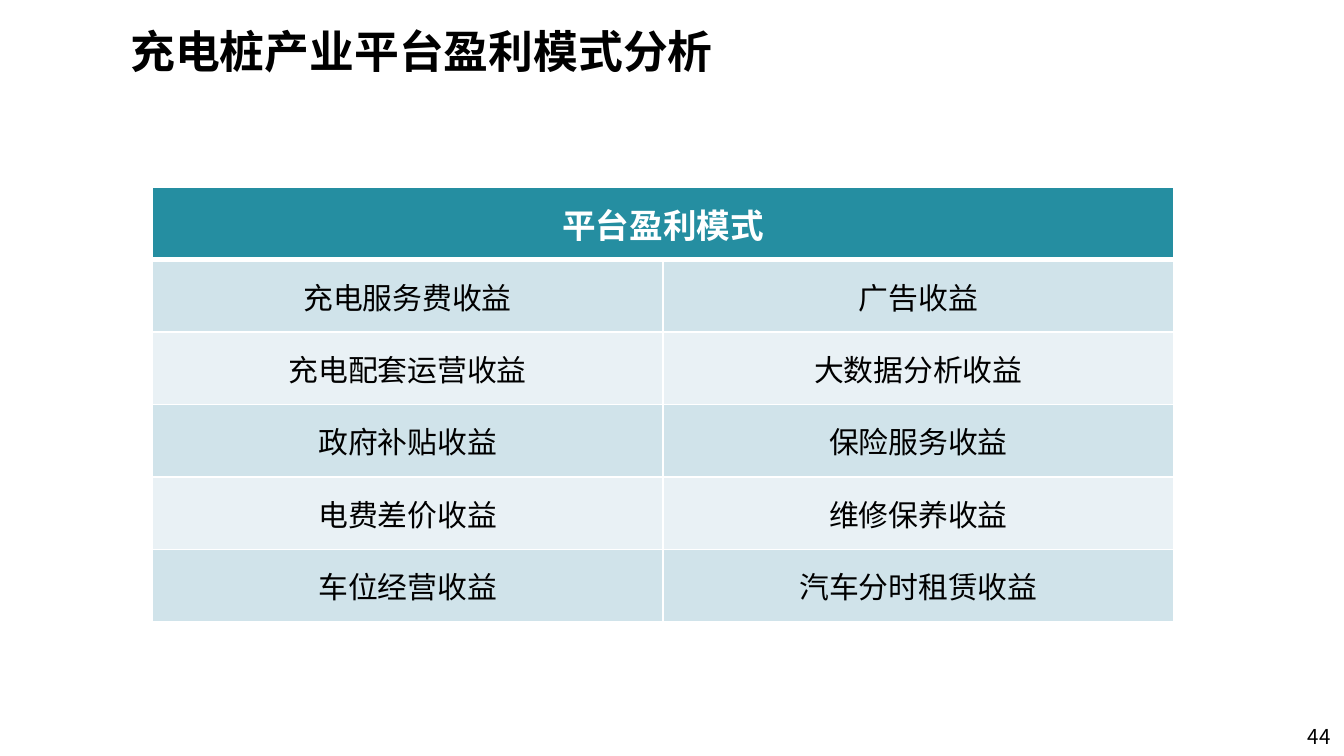
"""Build the slide on the profit model of a charging-pile platform."""
from lxml import etree
from pptx import Presentation
from pptx.dml.color import RGBColor
from pptx.enum import text
from pptx.oxml import ns
from pptx.util import Pt

FONT = "Noto Sans CJK SC"
COLORS = {
    "ink": "000000",
    "white": "FFFFFF",
    "header": "258EA1",
    "odd": "D0E3EA",
    "even": "E9F1F5",
}
HEADING = "平台盈利模式"
INCOMES = [
    ("充电服务费收益", "广告收益"),
    ("充电配套运营收益", "大数据分析收益"),
    ("政府补贴收益", "保险服务收益"),
    ("电费差价收益", "维修保养收益"),
    ("车位经营收益", "汽车分时租赁收益"),
]
COLUMN_WIDTH, ROW_HEIGHT = 273.6, 38.8


def write(frame, words, size, color, align, bold=False):
    frame.text = words
    paragraph = frame.paragraphs[0]
    paragraph.alignment = align
    font = paragraph.font
    font.size, font.bold, font.name = Pt(size), bold, FONT
    font.color.rgb = RGBColor.from_string(COLORS[color])
    properties = paragraph._p.get_or_add_pPr().get_or_add_defRPr()
    etree.SubElement(properties, ns.qn("a:ea"), typeface=FONT)
    return paragraph


def add_title(slide):
    title = slide.shapes.title
    title.left, title.top, title.width, title.height = Pt(62.6), Pt(12.2), Pt(566.6), Pt(37.4)
    frame = title.text_frame
    frame.vertical_anchor = text.MSO_ANCHOR.TOP
    frame.auto_size = text.MSO_AUTO_SIZE.NONE
    heading = write(frame, "充电桩产业平台盈利模式分析", 24, "ink", text.PP_ALIGN.LEFT, True)
    heading.line_spacing = 0.9


def add_page_number(slide):
    frame = slide.shapes.add_textbox(Pt(524.2), Pt(383.8), Pt(195.8), Pt(21.6)).text_frame
    frame.word_wrap = True
    frame.vertical_anchor = text.MSO_ANCHOR.MIDDLE
    write(frame, "44", 11, "ink", text.PP_ALIGN.RIGHT)


def set_borders(cell, top, bottom):
    properties = cell._tc.get_or_add_tcPr()
    for side, width in (("L", 1), ("R", 1), ("T", top), ("B", bottom)):
        line = etree.SubElement(properties, ns.qn(f"a:ln{side}"), w=str(Pt(width)))
        fill = etree.SubElement(line, ns.qn("a:solidFill"))
        etree.SubElement(fill, ns.qn("a:srgbClr"), val=COLORS["white"])


def style_cell(cell, fill, top=1, bottom=1):
    set_borders(cell, top, bottom)
    cell.fill.solid()
    cell.fill.fore_color.rgb = RGBColor.from_string(COLORS[fill])
    cell.vertical_anchor = text.MSO_ANCHOR.MIDDLE


def add_income_table(slide):
    rows = len(INCOMES) + 1
    table = slide.shapes.add_table(
        rows, 2, Pt(81.6), Pt(100.4), Pt(2 * COLUMN_WIDTH), Pt(rows * ROW_HEIGHT)
    ).table
    for row in table.rows:
        row.height = Pt(ROW_HEIGHT)
    for column in range(2):
        style_cell(table.cell(0, column), "header", bottom=3)
    header = table.cell(0, 0)
    header.merge(table.cell(0, 1))
    write(header.text_frame, HEADING, 18, "white", text.PP_ALIGN.CENTER, True)
    for row, incomes in enumerate(INCOMES, 1):
        for column, income in enumerate(incomes):
            cell = table.cell(row, column)
            style_cell(cell, "odd" if row % 2 else "even", top=3 if row == 1 else 1)
            write(cell.text_frame, income, 16, "ink", text.PP_ALIGN.CENTER)


def main():
    deck = Presentation()
    deck.slide_width, deck.slide_height = Pt(720), Pt(405)
    slide = deck.slides.add_slide(deck.slide_layouts[5])
    add_title(slide)
    add_page_number(slide)
    add_income_table(slide)
    deck.save("out.pptx")


if __name__ == "__main__":
    main()
